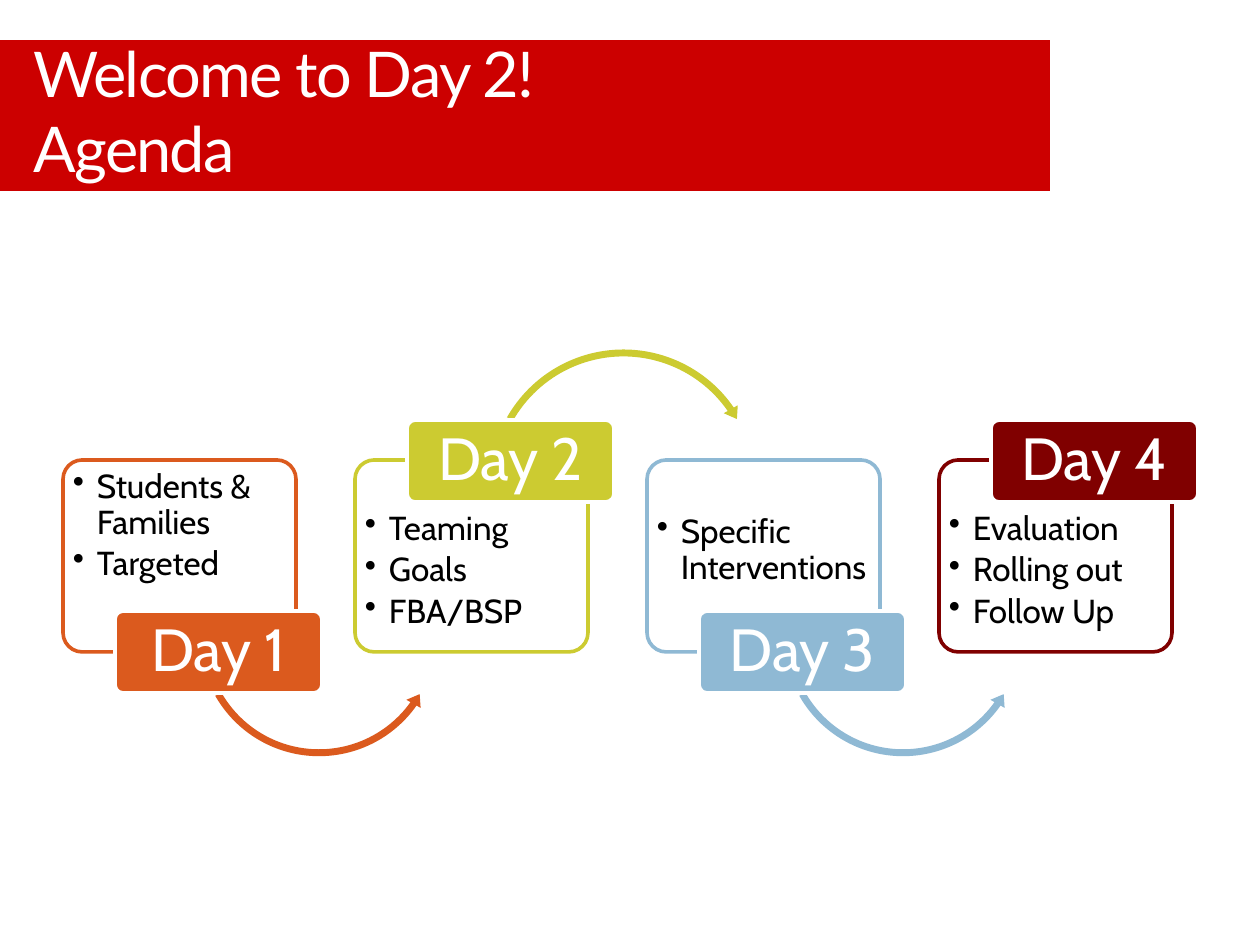
import dataclasses

import pptx
import pptx.dml.color
import pptx.enum.shapes
import pptx.enum.text
import pptx.util
from lxml import etree

SHAPES = pptx.enum.shapes.MSO_SHAPE
ALIGN = pptx.enum.text.PP_ALIGN
ANCHOR = pptx.enum.text.MSO_ANCHOR


@dataclasses.dataclass(frozen=True)
class Theme:
    band: str = "CC0000"
    white: str = "FFFFFF"
    ink: str = "000000"
    orange: str = "DB5A1E"
    lime: str = "CCCB31"
    blue: str = "8FB9D4"
    maroon: str = "800000"
    title_font: str = "Lato"
    body_font: str = "Cabin"
    title_size: int = 36
    day_size: int = 34
    item_size: int = 19
    thin: float = 0.75
    thick: float = 2.08


class Builder:
    def __init__(self, deck, theme):
        self.theme = theme
        self.page = deck.slides.add_slide(deck.slide_layouts[5])

    def px(self, *lengths):
        return [pptx.util.Emu(length * 914400 // 126) for length in lengths]

    def color(self, value):
        return pptx.dml.color.RGBColor.from_string(value)

    def shape(self, kind, at, fill, line=None, width=0, adjustments=()):
        shape = self.page.shapes.add_shape(kind, *self.px(*at))
        shape.shadow.inherit = False
        shape.fill.solid()
        shape.fill.fore_color.rgb = self.color(fill)
        if line:
            shape.line.color.rgb = self.color(line)
            shape.line.width = pptx.util.Pt(width)
        else:
            shape.line.fill.background()
        for index, value in enumerate(adjustments):
            shape.adjustments[index] = value
        return shape

    def style(self, para, font, size, color):
        for span in para.runs:
            span.font.name = font
            span.font.size = pptx.util.Pt(size)
            span.font.color.rgb = self.color(color)

    def insets(self, frame, across, down):
        frame.margin_left, frame.margin_right = self.px(across, across)
        frame.margin_top, frame.margin_bottom = self.px(down, down)

    def title(self, text, at):
        title = self.page.shapes.title
        title.left, title.top, title.width, title.height = self.px(*at)
        frame = title.text_frame
        frame.text = text
        frame.auto_size = pptx.enum.text.MSO_AUTO_SIZE.NONE
        frame.vertical_anchor = ANCHOR.MIDDLE
        para = frame.paragraphs[0]
        para.alignment = ALIGN.LEFT
        self.style(para, self.theme.title_font, self.theme.title_size, self.theme.white)
        for span in para.runs:
            span.font._element.set("spc", "-100")

    def band(self, at):
        band = self.shape(SHAPES.RECTANGLE, at, self.theme.band,
                          self.theme.white, self.theme.thin)
        self.page.shapes._spTree.insert(2, band._element)

    def card(self, at, color):
        self.shape(SHAPES.ROUNDED_RECTANGLE, at, self.theme.white,
                   color, self.theme.thick, [0.1])

    def day(self, text, at, color):
        tag = self.shape(SHAPES.ROUNDED_RECTANGLE, at, color,
                         self.theme.white, self.theme.thick, [0.1])
        frame = tag.text_frame
        frame.text = text
        frame.vertical_anchor = ANCHOR.MIDDLE
        self.insets(frame, 9, 6)
        para = frame.paragraphs[0]
        para.alignment = ALIGN.CENTER
        para.line_spacing = 0.9
        self.style(para, self.theme.body_font, self.theme.day_size, self.theme.white)

    def bullets(self, items, at):
        box = self.page.shapes.add_textbox(*self.px(*at))
        frame = box.text_frame
        frame.word_wrap = True
        self.insets(frame, 5, 5)
        frame.text = "\n".join(items)
        indent = self.px(24)[0]
        for para in frame.paragraphs:
            para.line_spacing = 0.9
            para.space_after = pptx.util.Pt(3)
            self.style(para, self.theme.body_font, self.theme.item_size, self.theme.ink)
            properties = para._p.get_or_add_pPr()
            properties.set("marL", str(indent))
            properties.set("indent", str(-indent))
            bullet = etree.SubElement(properties, pptx.oxml.ns.qn("a:buChar"))
            bullet.set("char", "•")

    def arrow(self, kind, at, color, percents):
        self.shape(kind, at, color, adjustments=[value / 100 for value in percents])


def main():
    deck = pptx.Presentation()
    deck.slide_width, deck.slide_height = pptx.util.Inches(10), pptx.util.Inches(7.5)
    theme = Theme()
    builder = Builder(deck, theme)
    builder.title("Welcome to Day 2! \vAgenda", (21, 0, 1029, 220))
    builder.band((-10, 39, 1061, 153))

    days = [
        ("Day 1", theme.orange, 465, ["Students & Families", "Targeted"]),
        ("Day 2", theme.lime, 507, ["Teaming", "Goals", "FBA/BSP"]),
        ("Day 3", theme.blue, 510, ["Specific Interventions"]),
        ("Day 4", theme.maroon, 507, ["Evaluation", "Rolling out", "Follow Up"]),
    ]
    for index, (name, color, text_top, items) in enumerate(days):
        left = 63 + 292 * index
        tag_below = index % 2 == 0
        builder.card((left, 460, 233, 192), color)
        builder.bullets(items, (left + 5, text_top, 224, 142))
        if tag_below:
            builder.arrow(SHAPES.LEFT_CIRCULAR_ARROW, (left + 132, 513, 248, 248),
                          color, (2.8, 341.8, 2117.3, 9024.5, 3.3))
        elif index < len(days) - 1:
            builder.arrow(SHAPES.CIRCULAR_ARROW, (left + 130, 345, 277, 277),
                          color, (2.5, 303.1, 19521.4, 12575.5, 2.9))
        builder.day(name, (left + 52, 611 if tag_below else 420, 207, 82), color)

    deck.save("out.pptx")


if __name__ == "__main__":
    main()
